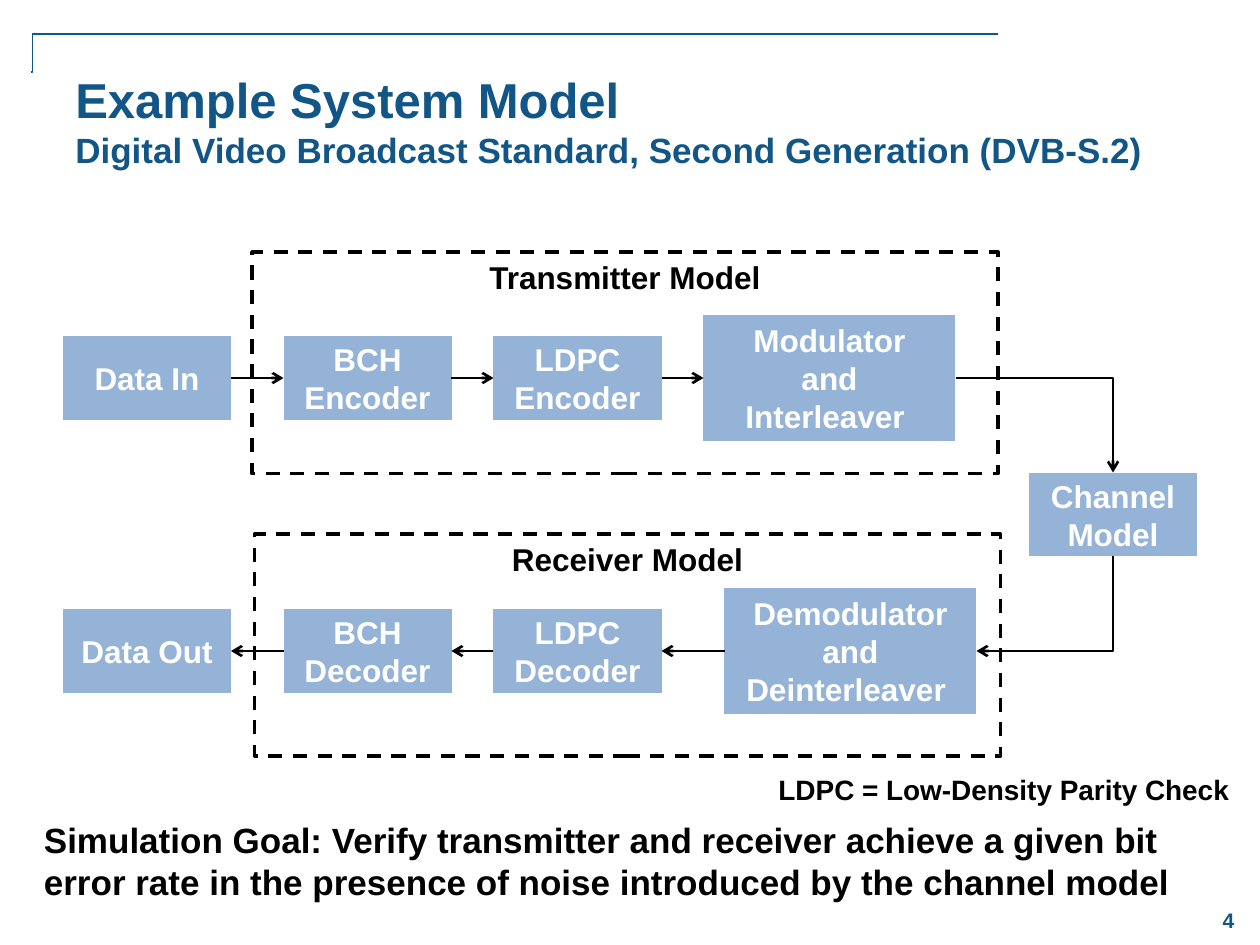
import pptx
import pptx.util
import pptx.dml.color
import pptx.enum.dml
import pptx.enum.shapes
import pptx.enum.text
import pptx.oxml
import pptx.oxml.ns
from lxml import etree

RGB = pptx.dml.color.RGBColor
NAVY, BLUE = RGB(0x12, 0x56, 0x87), RGB(0x95, 0xB3, 0xD7)
BLACK, WHITE = RGB(0, 0, 0), RGB(255, 255, 255)
ALIGN = pptx.enum.text.PP_ALIGN
ANCHOR = pptx.enum.text.MSO_ANCHOR
SHAPE = pptx.enum.shapes.MSO_SHAPE
CONNECTOR = pptx.enum.shapes.MSO_CONNECTOR
TOP, LEFT, BOTTOM, RIGHT = range(4)
UNIT = 1 / 12  # grid step in inches

# Content: each block is (lines, left, centre row, width, height) in grid steps
SMALL, LARGE = (16, 8), (24, 12)
SEND_ROW, CHANNEL_ROW, RECEIVE_ROW = 36, 49, 62
BLOCKS = {
    "data in": (["Data In"], 6, SEND_ROW, SMALL),
    "bch encoder": (["BCH", "Encoder"], 27, SEND_ROW, SMALL),
    "ldpc encoder": (["LDPC", "Encoder"], 47, SEND_ROW, SMALL),
    "modulator": (["Modulator", "and", "Interleaver "], 67, SEND_ROW, LARGE),
    "channel": (["Channel", "Model"], 98, CHANNEL_ROW, SMALL),
    "demodulator": (["Demodulator", "and Deinterleaver "], 69, RECEIVE_ROW, LARGE),
    "ldpc decoder": (["LDPC", "Decoder"], 47, RECEIVE_ROW, SMALL),
    "bch decoder": (["BCH", "Decoder"], 27, RECEIVE_ROW, SMALL),
    "data out": (["Data Out"], 6, RECEIVE_ROW, SMALL),
}
SEND_CHAIN = ["data in", "bch encoder", "ldpc encoder", "modulator"]
RECEIVE_CHAIN = ["demodulator", "ldpc decoder", "bch decoder", "data out"]
PANELS = [("Transmitter Model", 2, 2), ("Receiver Model", 2.02, 4.24)]
PANEL_SIZE = (5.92, 1.76)
TITLE = [("Example System Model", 28),
         ("Digital Video Broadcast Standard, Second Generation (DVB-S.2)", 20)]
LEGEND = "LDPC = Low-Density Parity Check"
GOAL = ("Simulation Goal: Verify transmitter and receiver achieve a given bit "
        "error rate in the presence of noise introduced by the channel model")

deck = pptx.Presentation()
deck.slide_width, deck.slide_height = pptx.util.Inches(10), pptx.util.Inches(7.5)
page = deck.slides.add_slide(deck.slide_layouts[6])


def inches(*lengths):
    return [pptx.util.Inches(length) for length in lengths]


def add_span(para, text, size, color):
    span = para.add_run()
    span.text = text
    span.font.name, span.font.bold = "Arial", True
    span.font.size, span.font.color.rgb = pptx.util.Pt(size), color


def write(shape, lines, size, color, align=ALIGN.LEFT, anchor=ANCHOR.TOP, wrap=True):
    frame = shape.text_frame
    frame.word_wrap, frame.vertical_anchor = wrap, anchor
    for index, line in enumerate(lines):
        para = frame.add_paragraph() if index else frame.paragraphs[0]
        para.alignment = align
        add_span(para, line, size, color)


def add_box(kind, place):
    box = page.shapes.add_shape(kind, *inches(*place))
    box.shadow.inherit = False
    return box


def add_line(kind, start, end, color=BLACK, width=1.5, arrow=True):
    line = page.shapes.add_connector(kind, *inches(*start, *end))
    line.line.color.rgb, line.line.width = color, pptx.util.Pt(width)
    if arrow:
        etree.SubElement(line.line._get_or_add_ln(),
                         pptx.oxml.ns.qn("a:tailEnd"), type="arrow")
    etree.SubElement(line._element.spPr, pptx.oxml.ns.qn("a:effectLst"))
    return line


def set_one_bend(line):
    geometry = line._element.spPr.find(pptx.oxml.ns.qn("a:prstGeom"))
    geometry.set("prst", "bentConnector2")


# Corner rule
rule = add_line(CONNECTOR.ELBOW, (7.92, 0.27), (0.25, 0.57), NAVY, 1, arrow=False)
guides = rule._element.spPr.find(".//" + pptx.oxml.ns.qn("a:avLst"))
etree.SubElement(guides, pptx.oxml.ns.qn("a:gd"), name="adj1", fmla="val 99900")

# Title and page number
number = page.shapes.add_textbox(*inches(9.5, 7.09, 0.5, 0.42))
write(number, ["4"], 12, NAVY, ALIGN.CENTER, ANCHOR.MIDDLE)
title = page.shapes.add_textbox(*inches(0.5, 0.5, 8.83, 1.08))
title.text_frame.word_wrap = True
heading = title.text_frame.paragraphs[0]
for index, (text, size) in enumerate(TITLE):
    if index:
        heading.add_line_break()
    add_span(heading, text, size, NAVY)

# Blocks
boxes = {}
for name, (lines, left, row, (width, height)) in BLOCKS.items():
    place = [UNIT * step for step in (left, row - height / 2, width, height)]
    box = boxes[name] = add_box(SHAPE.FLOWCHART_PROCESS, place)
    box.fill.solid()
    box.fill.fore_color.rgb = BLUE
    box.line.fill.background()
    write(box, lines, 18, WHITE, ALIGN.CENTER, ANCHOR.MIDDLE)

# Straight arrows along each chain
for chain, out_side, in_side in ((SEND_CHAIN, RIGHT, LEFT), (RECEIVE_CHAIN, LEFT, RIGHT)):
    for source, target in zip(chain, chain[1:]):
        arrow = add_line(CONNECTOR.STRAIGHT, (0, 0), (0, 0))
        arrow.begin_connect(boxes[source], out_side)
        arrow.end_connect(boxes[target], in_side)

# Bent arrows into and out of the channel
channel_x = UNIT * (98 + 8)
channel_top, channel_bottom = UNIT * (CHANNEL_ROW - 4), UNIT * (CHANNEL_ROW + 4)
into_channel = add_line(CONNECTOR.ELBOW, (UNIT * (67 + 24), UNIT * SEND_ROW),
                        (channel_x, channel_top))
set_one_bend(into_channel)

# A quarter turn swaps width and height about the centre
demod_x, demod_y = UNIT * (69 + 24), UNIT * RECEIVE_ROW
mid_x, mid_y = (channel_x + demod_x) / 2, (channel_bottom + demod_y) / 2
half_w, half_h = (demod_y - channel_bottom) / 2, (channel_x - demod_x) / 2
from_channel = add_line(CONNECTOR.ELBOW, (mid_x - half_w, mid_y - half_h),
                        (mid_x + half_w, mid_y + half_h))
set_one_bend(from_channel)
from_channel._element.spPr.find(pptx.oxml.ns.qn("a:xfrm")).set("rot", "5400000")

# Dashed panels
for label, left, top in PANELS:
    panel = add_box(SHAPE.RECTANGLE, (left, top, *PANEL_SIZE))
    panel.fill.background()
    panel.line.color.rgb, panel.line.width = BLACK, pptx.util.Pt(2)
    panel.line.dash_style = pptx.enum.dml.MSO_LINE.DASH
    write(panel, [label], 18, BLACK, ALIGN.CENTER)

# Legend and goal
legend = page.shapes.add_textbox(*inches(6.08, 6.08, 3.82, 0.37))
write(legend, [LEGEND], 16, BLACK, wrap=False)
goal = page.shapes.add_textbox(*inches(0.25, 6.45, 9.25, 0.77))
write(goal, [GOAL], 20, BLACK)

deck.save("out.pptx")
